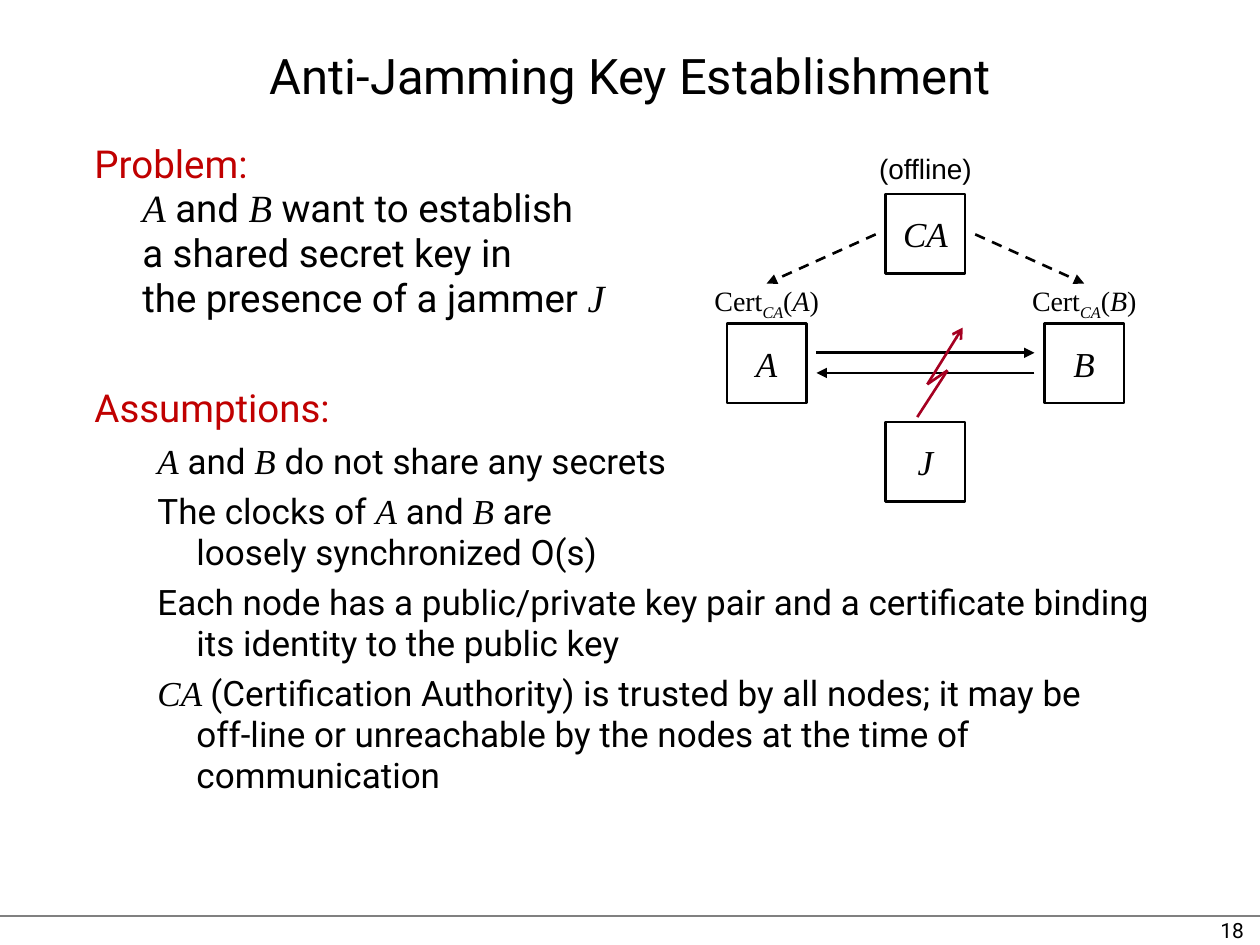
from lxml import etree
from pptx import Presentation
from pptx.dml.color import RGBColor
from pptx.enum.dml import MSO_LINE
from pptx.enum.shapes import MSO_CONNECTOR, MSO_SHAPE
from pptx.enum.text import MSO_ANCHOR, PP_ALIGN
from pptx.oxml.ns import qn
from pptx.util import Inches, Pt

LEFT, CENTER, RIGHT = PP_ALIGN.LEFT, PP_ALIGN.CENTER, PP_ALIGN.RIGHT
TOP, MIDDLE = MSO_ANCHOR.TOP, MSO_ANCHOR.MIDDLE
DASH = MSO_LINE.DASH
STRAIGHT = MSO_CONNECTOR.STRAIGHT
RECTANGLE = MSO_SHAPE.RECTANGLE

COLUMNS, ROWS = 100, 75
CELL = Inches(0.1)

SANS, SERIF, LABEL = "Roboto", "Times New Roman", "Arial"
BLACK, WHITE, GREY, RED, CRIMSON = "000000", "FFFFFF", "808080", "C00000", "A50021"

STYLES = {
    "plain": {"name": SANS},
    "heading": {"name": SANS, "color": RED},
    "math": {"name": SERIF, "italic": True},
    "serif": {"name": SERIF},
    "sub": {"name": SERIF, "italic": True, "baseline": "-25000"},
    "label": {"name": LABEL},
}


def rgb(value):
    return RGBColor.from_string(value)


def cells(*counts):
    return [round(count * CELL) for count in counts]


class SlideBuilder:
    """Draws on one slide; every length is in grid cells."""

    def __init__(self, slide, ink=BLACK, line_width=1.5):
        self.shapes = slide.shapes
        self.ink = ink
        self.line_width = line_width

    def fill_paragraph(self, paragraph, runs, size, **layout):
        """Fill a paragraph from (style, text) pairs; a newline is a line break."""
        for attribute, value in layout.items():
            setattr(paragraph, attribute, value)
        for style, text in runs:
            for number, line in enumerate(text.split("\n")):
                if number:
                    paragraph.add_line_break()
                if line:
                    self.style_run(paragraph.add_run(), line, size, STYLES[style])

    def style_run(self, run, text, size, style):
        run.text = text
        run.font.size = Pt(size)
        run.font.name = style["name"]
        run.font.italic = style.get("italic", False)
        run.font.color.rgb = rgb(style.get("color", self.ink))
        if "baseline" in style:
            run.font._element.set("baseline", style["baseline"])

    def text(self, at, runs, size, margins=(0, 0), anchor=TOP, wrap=True, **layout):
        frame = self.shapes.add_textbox(*cells(*at)).text_frame
        side, top = cells(*margins)
        settings = {
            "margin_left": side, "margin_right": side,
            "margin_top": top, "margin_bottom": top,
            "vertical_anchor": anchor, "word_wrap": wrap,
        }
        for attribute, value in settings.items():
            setattr(frame, attribute, value)
        self.fill_paragraph(frame.paragraphs[0], runs, size, **layout)
        return frame

    def bullet(self, frame, runs, size, left, hanging, **layout):
        """Add a paragraph whose later lines are indented by left."""
        paragraph = frame.add_paragraph()
        self.indent(paragraph, left, hanging)
        self.fill_paragraph(paragraph, runs, size, **layout)

    def indent(self, paragraph, left, hanging):
        margin, offset = cells(left, -hanging)
        properties = paragraph._p.get_or_add_pPr()
        properties.set("marL", str(margin))
        properties.set("indent", str(offset))

    def node(self, name, left, top, side):
        box = self.shapes.add_shape(RECTANGLE, *cells(left, top, side, side))
        box.shadow.inherit = False
        box.fill.solid()
        box.fill.fore_color.rgb = rgb(WHITE)
        box.line.color.rgb = rgb(self.ink)
        box.line.width = Pt(self.line_width)
        box.text_frame.word_wrap = False
        box.text_frame.vertical_anchor = MIDDLE
        self.fill_paragraph(box.text_frame.paragraphs[0], [("math", name)], 20,
                            alignment=CENTER)

    def line(self, start, end, color=None, width=None, dash=None, arrow=None):
        connector = self.shapes.add_connector(STRAIGHT, *cells(*start, *end))
        connector.line.color.rgb = rgb(color or self.ink)
        connector.line.width = Pt(width or self.line_width)
        if dash:
            connector.line.dash_style = dash
        properties = connector._element.spPr
        if arrow:
            outline = properties.find(qn("a:ln"))
            etree.SubElement(outline, qn("a:tailEnd"), type=arrow)
        etree.SubElement(properties, qn("a:effectLst"))


def add_frame(builder):
    builder.line((0, 72.7), (COLUMNS, 72.7), color=GREY, width=0.75)
    builder.text((78.9, 72.4, 20.8, 2.6), [("plain", "18")], 12,
                 margins=(1, 0.5), alignment=RIGHT, line_spacing=0.98)
    builder.text((0, 2, COLUMNS, 8.2), [("plain", "Anti-Jamming Key Establishment")], 28,
                 anchor=MIDDLE, alignment=CENTER, line_spacing=0.97)


def add_body(builder):
    common = {"alignment": LEFT, "line_spacing": 0.97}
    problem = [
        ("heading", "Problem:\n"), ("math", "A"), ("plain", " and "), ("math", "B"),
        ("plain", " want to establish\na shared secret key in\nthe presence of a jammer "),
        ("math", "J"),
    ]
    assumptions = [
        [("math", "A"), ("plain", " and "), ("math", "B"),
         ("plain", " do not share any secrets")],
        [("plain", "The clocks of "), ("math", "A"), ("plain", " and "), ("math", "B"),
         ("plain", " are\nloosely synchronized O(s)")],
        [("plain", "Each node has a public/private key pair and a certificate "
                   "binding its identity to the public key")],
        [("math", "CA "),
         ("plain", "(Certification Authority) is trusted by all nodes; it may be\n"
                   "off-line or unreachable by the nodes at the time of communication")],
    ]
    body = builder.text((7.5, 11.2, 85, 55.4), problem, 22, margins=(0, 0.1), **common)
    builder.indent(body.paragraphs[0], 3.8, 3.8)
    builder.bullet(body, [("heading", "Assumptions:")], 22, 3.8, 3.8,
                   space_before=Pt(37.5), **common)
    for assumption in assumptions:
        builder.bullet(body, assumption, 20, 8.1, 3.1, space_before=Pt(5.5), **common)


def add_protocol(builder):
    side, pitch, middle = 6.3, 12.6, 70.3
    axis = middle + side / 2
    party_top = 25.7
    label = {"margins": (1, 0.5), "wrap": False, "alignment": CENTER}

    builder.text((axis - 4.7, 11.5, 9.4, 3.7), [("label", "(offline)")], 16, **label)
    builder.node("CA", middle, 15.4, side)
    builder.node("J", middle, 33.5, side)
    for party, direction in (("A", -1), ("B", 1)):
        builder.node(party, middle + direction * pitch, party_top, side)
        center = axis + direction * pitch
        certificate = [("serif", "Cert"), ("sub", "CA"), ("serif", "("),
                       ("math", party), ("serif", ")")]
        builder.text((center - 5.35, 22, 10.7, 3.7), certificate, 16, **label)
        builder.line((axis + direction * 3.95, 18.6), (axis + direction * 12.6, 22.5),
                     dash=DASH, arrow="triangle")

    reach = 8.65
    for direction, row in ((1, 28), (-1, 29.6)):
        builder.line((axis - direction * reach, row), (axis + direction * reach, row),
                     arrow="triangle")

    bolt = [(72.8, 33.1), (75.2, 29.4), (73.6, 30.5), (76.4, 26)]
    for start, end in zip(bolt, bolt[1:]):
        builder.line(start, end, color=CRIMSON, arrow="arrow" if end == bolt[-1] else None)


def main():
    deck = Presentation()
    deck.slide_width, deck.slide_height = cells(COLUMNS, ROWS)
    builder = SlideBuilder(deck.slides.add_slide(deck.slide_layouts[6]))
    add_frame(builder)
    add_body(builder)
    add_protocol(builder)
    deck.save("out.pptx")


if __name__ == "__main__":
    main()
